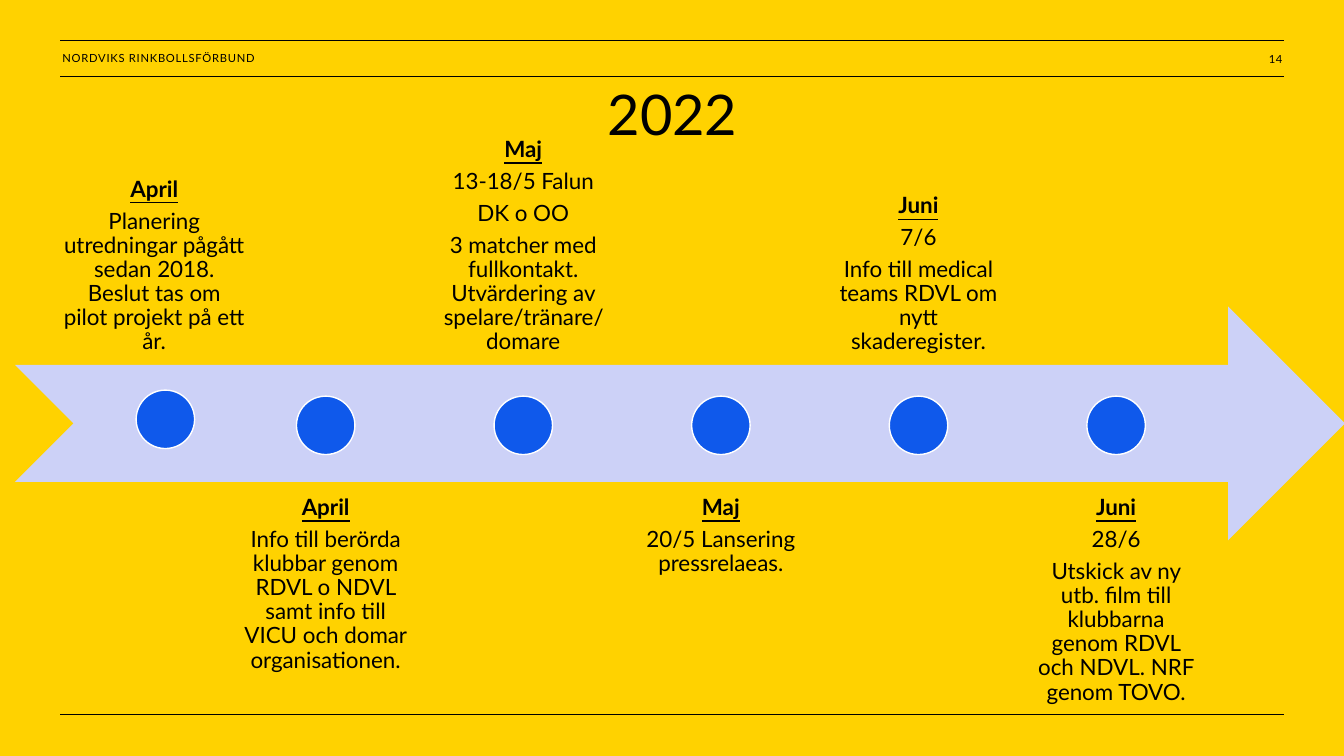
"""Build the 2022 timeline slide."""
from lxml import etree
from pptx import Presentation
from pptx import util as u
from pptx.dml.color import RGBColor
from pptx.enum import shapes, text
from pptx.oxml.ns import qn

YELLOW, BLACK, WHITE = "FFD200", "000000", "FFFFFF"
LAVENDER, BLUE = "CCD1F7", "0F59EB"
FONT = "Lato"
MID, TOP, BOTTOM = (text.MSO_ANCHOR.MIDDLE, text.MSO_ANCHOR.TOP,
                    text.MSO_ANCHOR.BOTTOM)
LEFT, CENTER, RIGHT = (text.PP_ALIGN.LEFT, text.PP_ALIGN.CENTER,
                       text.PP_ALIGN.RIGHT)

RULES = [0.4, 0.76, 7.09]
HEADER = "NORDVIKS RINKBOLLSFÖRBUND"
PAGE = "14"
TITLE = "2022"
EVENTS = [
    ("April", ["Planering utredningar pågått sedan 2018. "
               "Beslut tas om pilot projekt på ett år."]),
    ("April", ["Info till berörda klubbar genom RDVL o NDVL samt info till "
               "VICU och domar organisationen."]),
    ("Maj", ["13-18/5 Falun", "DK o OO",
             "3 matcher med fullkontakt. Utvärdering av "
             "spelare/tränare/domare"]),
    ("Maj", ["20/5 Lansering pressrelaeas."]),
    ("Juni", ["7/6", "Info till medical teams RDVL om nytt skaderegister."]),
    ("Juni", ["28/6", "Utskick av ny utb. film till klubbarna genom RDVL "
                      "och NDVL. NRF genom TOVO."]),
]
FIRST_CENTER, SECOND_CENTER, PITCH = 1.64, 3.23, 1.96
BOX_H, DOT = 2.32, 0.58

prs = Presentation()
prs.slide_width, prs.slide_height = u.Inches(13.33), u.Inches(7.5)
s = prs.slides.add_slide(prs.slide_layouts[6])


def rgb(value):
    return RGBColor.from_string(value)


def inches(*values):
    return [u.Inches(v) for v in values]


def add_rule(y):
    c = s.shapes.add_connector(shapes.MSO_CONNECTOR.STRAIGHT,
                               *inches(0.6, y, 12.73, y))
    c.line.color.rgb, c.line.width = rgb(BLACK), u.Pt(1)
    etree.SubElement(c._element.spPr, qn("a:effectLst"))


def add_shape(kind, box, fill, line=None):
    sp = s.shapes.add_shape(kind, *inches(*box))
    sp.shadow.inherit = False
    sp.fill.solid()
    sp.fill.fore_color.rgb = rgb(fill)
    if line:
        sp.line.color.rgb, sp.line.width = rgb(line), u.Pt(1)
    else:
        sp.line.fill.background()


def add_text(box, lines, size, align, anchor, insets, heading=False,
             spc=None, **para):
    tf = s.shapes.add_textbox(*inches(*box)).text_frame
    tf.word_wrap, tf.vertical_anchor = True, anchor
    for side, value in zip(("left", "top", "right", "bottom"), insets):
        setattr(tf, f"margin_{side}", u.Inches(value))
    for i, line in enumerate(lines):
        p = tf.add_paragraph() if i else tf.paragraphs[0]
        for name, value in {"alignment": align, **para}.items():
            setattr(p, name, value)
        r = p.add_run()
        r.text = line
        marked = heading and i == 0
        for name, value in {"name": FONT, "size": u.Pt(size), "bold": marked,
                            "underline": marked}.items():
            setattr(r.font, name, value)
        r.font.color.rgb = rgb(BLACK)
        if spc:
            r._r.get_or_add_rPr().set("spc", str(spc))


s.background.fill.solid()
s.background.fill.fore_color.rgb = rgb(YELLOW)
for y in RULES:
    add_rule(y)
add_text((0.62, 0.4, 3.36, 0.35), [HEADER], 8, LEFT, MID, [0] * 4, spc=50)
add_shape(shapes.MSO_SHAPE.NOTCHED_RIGHT_ARROW, (0.15, 3.04, 13.19, BOX_H),
          LAVENDER)

for i, (month, notes) in enumerate(EVENTS):
    center = SECOND_CENTER + (i - 1) * PITCH if i else FIRST_CENTER
    width, shift = (1.87, 0) if i else (2.04, -0.11)
    y, anchor = (4.8, TOP) if i % 2 else (1.32, BOTTOM)
    add_text((center + shift - width / 2, y, width, BOX_H), [month, *notes],
             16, CENTER, anchor, [0.12] * 4, heading=True,
             line_spacing=0.9, space_after=u.Pt(5.6))
    add_shape(shapes.MSO_SHAPE.OVAL,
              (center - DOT / 2, 3.93 if i else 3.87, DOT, DOT), BLUE, WHITE)

add_text((11.83, 0.4, 0.89, 0.34), [PAGE], 8, RIGHT, MID, (0, 0.04, 0, 0),
         spc=50)
add_text((4.94, 0.74, 3.46, 0.77), [TITLE], 40, CENTER, TOP,
         (0.1, 0.05, 0.1, 0.05))
prs.save("out.pptx")
